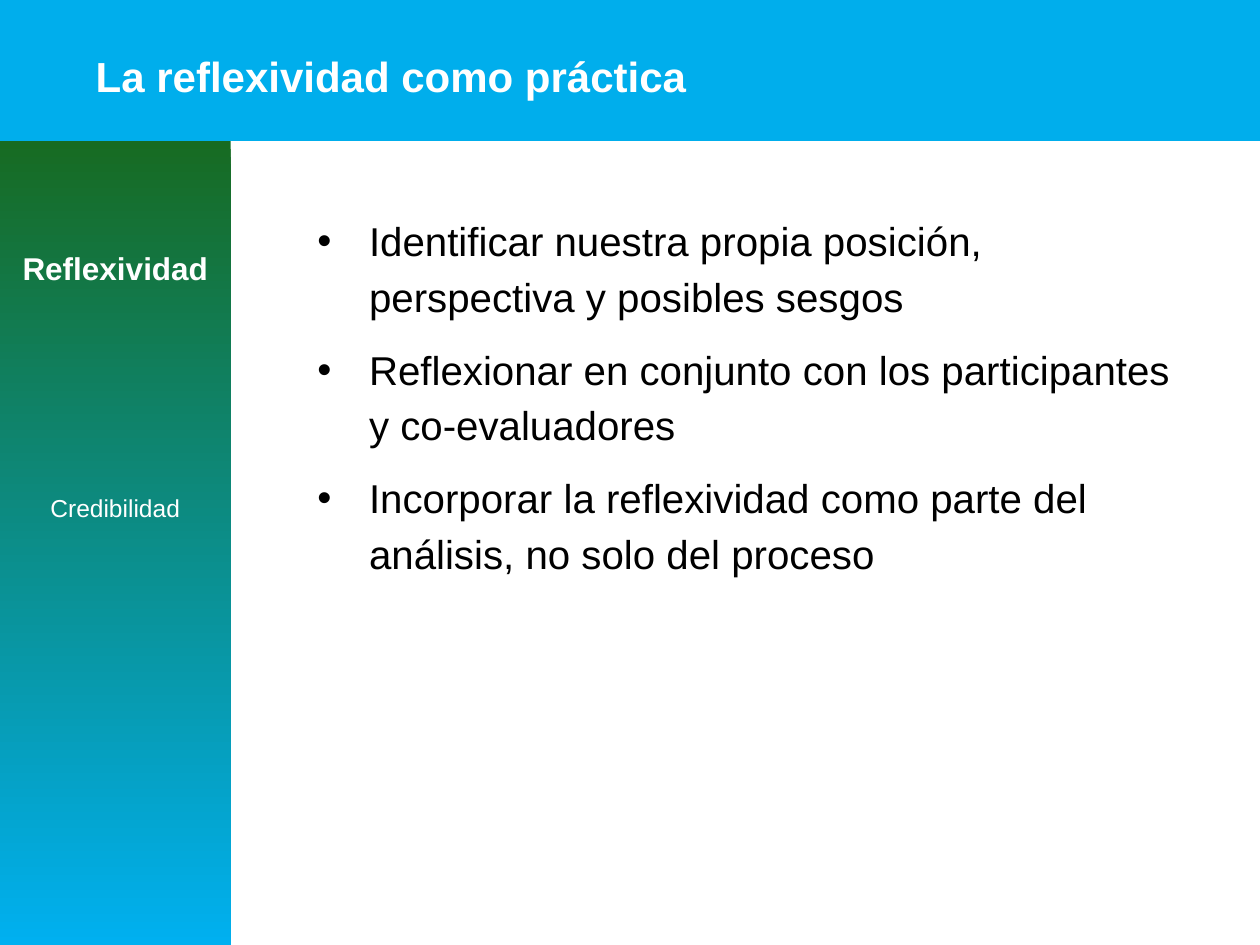
"""Build a slide on reflexivity as a practice, with a title band and a side bar."""
import dataclasses

import lxml.etree
import pptx
import pptx.dml.color
import pptx.enum.shapes
import pptx.enum.text
import pptx.oxml.ns
import pptx.util

Cm = pptx.util.Cm
Kind = pptx.enum.shapes.MSO_SHAPE
Align = pptx.enum.text.PP_ALIGN

HUES = {
    "band": "00AEEC",
    "top": "176B22",
    "base": "00B0F0",
    "light": "FFFFFF",
    "ink": "000000",
}
FONT = "Arial"
WIDE, HIGH = 25.4, 19.05
BAND_END = 2.84
SIDE_WIDE = 4.65
POINTS = (
    "Identificar nuestra propia posición, perspectiva y posibles sesgos",
    "Reflexionar en conjunto con los participantes y co-evaluadores",
    "Incorporar la reflexividad como parte del análisis, no solo del proceso",
)


@dataclasses.dataclass(frozen=True)
class Box:
    left: float
    top: float
    width: float
    height: float

    def sides(self) -> tuple:
        return tuple(Cm(side) for side in dataclasses.astuple(self))


@dataclasses.dataclass(frozen=True)
class Label:
    text: str
    top: float
    size: int
    bold: bool = False


LABELS = (
    Label("Reflexividad", 4.78, 18, True),
    Label("Credibilidad", 9.68, 14),
)


def hue(name: str) -> pptx.dml.color.RGBColor:
    return pptx.dml.color.RGBColor.from_string(HUES[name])


def set_font(para, size: int, name: str, bold: bool = False) -> None:
    font = para.font
    font.name, font.size, font.bold = FONT, pptx.util.Pt(size), bold
    font.color.rgb = hue(name)


def set_frame(frame, across: float, down: float) -> None:
    frame.word_wrap = True
    frame.margin_left = frame.margin_right = Cm(across)
    frame.margin_top = frame.margin_bottom = Cm(down)


def add_block(slide, kind: Kind, box: Box):
    block = slide.shapes.add_shape(kind, *box.sides())
    block.shadow.inherit = False
    block.line.fill.background()
    return block


def add_title(slide, text: str) -> None:
    band = add_block(slide, Kind.RECTANGLE, Box(0, -0.03, WIDE, BAND_END + 0.03))
    band.fill.solid()
    band.fill.fore_color.rgb = hue("band")
    title = slide.shapes.title
    band.element.addnext(title.element)
    title.left, title.top, title.width, title.height = Box(1.8, 0.3, 22.33, 2.24).sides()
    frame = title.text_frame
    set_frame(frame, 0.13, 0.13)
    frame.vertical_anchor = pptx.enum.text.MSO_ANCHOR.MIDDLE
    frame.text = text
    para = frame.paragraphs[0]
    para.alignment, para.line_spacing = Align.LEFT, 1.2
    set_font(para, 24, "light", True)


def add_bullet(para) -> None:
    props = para._p.get_or_add_pPr()
    props.set("marL", str(Cm(1.27)))
    props.set("indent", str(Cm(-1.04)))
    name = pptx.oxml.ns.qn
    tint = lxml.etree.SubElement(props, name("a:buClr"))
    lxml.etree.SubElement(tint, name("a:srgbClr"), val=HUES["ink"])
    lxml.etree.SubElement(props, name("a:buFont"), typeface=FONT)
    lxml.etree.SubElement(props, name("a:buChar"), char="•")


def add_points(slide, points: tuple[str, ...], box: Box) -> None:
    frame = slide.shapes.add_textbox(*box.sides()).text_frame
    set_frame(frame, 0.25, 0.13)
    frame.auto_size = pptx.enum.text.MSO_AUTO_SIZE.SHAPE_TO_FIT_TEXT
    frame.text = "\n".join(points)
    for place, para in enumerate(frame.paragraphs):
        add_bullet(para)
        para.line_spacing = 1.15
        if place:
            para.space_before = pptx.util.Pt(10)
        set_font(para, 23, "ink")
    para.space_after = pptx.util.Pt(10)


def add_side(slide) -> None:
    box = Box(0, BAND_END, SIDE_WIDE, HIGH - BAND_END)
    fill = add_block(slide, Kind.FLOWCHART_PROCESS, box).fill
    fill.gradient()
    fill.gradient_angle = 270
    for place, (stop, name) in enumerate(zip(fill.gradient_stops, ("top", "base"))):
        stop.position = place
        stop.color.rgb = hue(name)


def add_label(slide, label: Label) -> None:
    box = Box(0, label.top, SIDE_WIDE, 2.01)
    frame = slide.shapes.add_textbox(*box.sides()).text_frame
    set_frame(frame, 0.25, 0.25)
    frame.text = label.text
    para = frame.paragraphs[0]
    para.alignment = Align.CENTER
    set_font(para, label.size, "light", label.bold)


def main() -> None:
    deck = pptx.Presentation()
    deck.slide_width, deck.slide_height = Cm(WIDE), Cm(HIGH)
    slide = deck.slides.add_slide(deck.slide_layouts[5])
    add_title(slide, "La reflexividad como práctica")
    add_points(slide, POINTS, Box(5.92, 4.09, 18.36, 8.1))
    add_side(slide)
    for label in LABELS:
        add_label(slide, label)
    deck.save("out.pptx")


if __name__ == "__main__":
    main()
